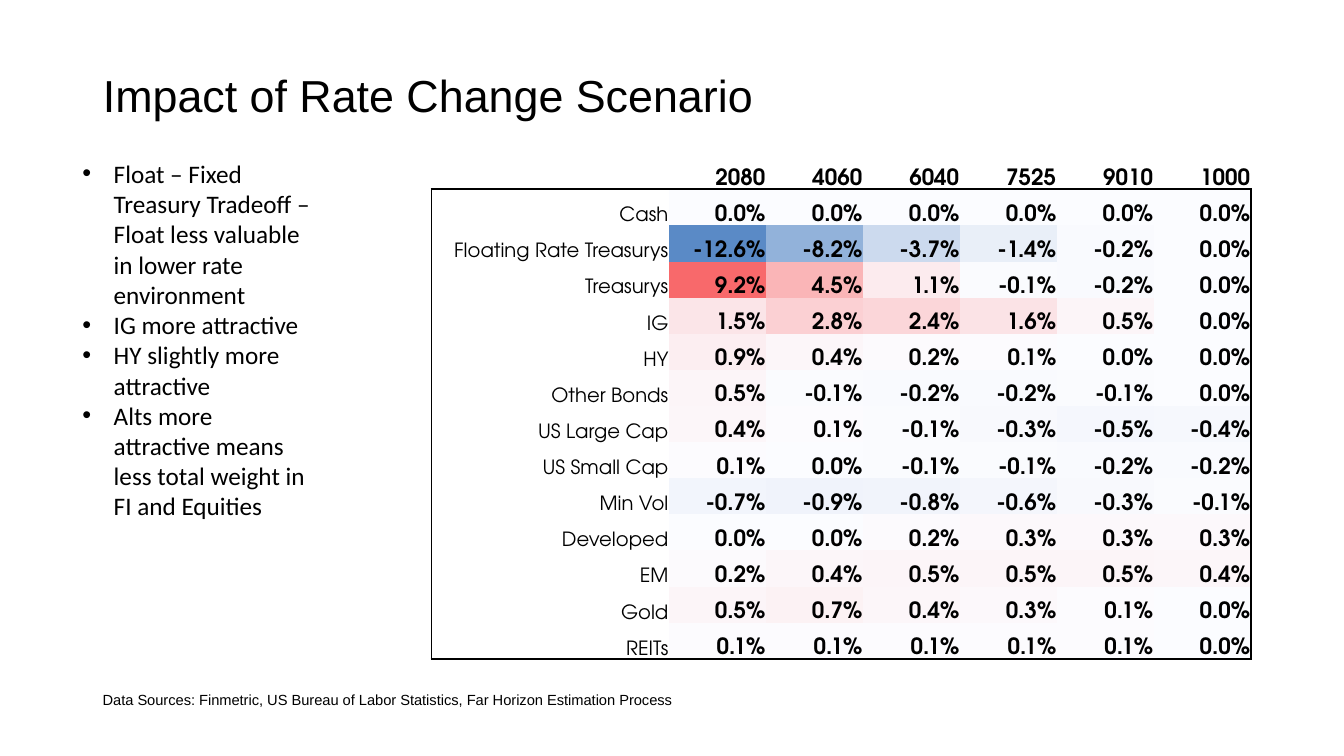
from pptx import Presentation
from pptx.dml.color import RGBColor
from pptx.enum.text import MSO_ANCHOR, MSO_AUTO_SIZE, PP_ALIGN
from pptx.oxml import parse_xml
from pptx.oxml.ns import nsdecls
from pptx.util import Emu, Pt

TITLE = "Impact of Rate Change Scenario"
POINTS = [
    "Float – Fixed Treasury Tradeoff – Float less valuable in lower rate environment",
    "IG more attractive",
    "HY slightly more attractive",
    "Alts more attractive means less total weight in FI and Equities",
]
SOURCES = "Data Sources: Finmetric, US Bureau of Labor Statistics, Far Horizon Estimation Process"
PORTFOLIOS = ["2080", "4060", "6040", "7525", "9010", "1000"]
CHANGES = {
    "Cash": [0.0, 0.0, 0.0, 0.0, 0.0, 0.0],
    "Floating Rate Treasurys": [-12.6, -8.2, -3.7, -1.4, -0.2, 0.0],
    "Treasurys": [9.2, 4.5, 1.1, -0.1, -0.2, 0.0],
    "IG": [1.5, 2.8, 2.4, 1.6, 0.5, 0.0],
    "HY": [0.9, 0.4, 0.2, 0.1, 0.0, 0.0],
    "Other Bonds": [0.5, -0.1, -0.2, -0.2, -0.1, 0.0],
    "US Large Cap": [0.4, 0.1, -0.1, -0.3, -0.5, -0.4],
    "US Small Cap": [0.1, 0.0, -0.1, -0.1, -0.2, -0.2],
    "Min Vol": [-0.7, -0.9, -0.8, -0.6, -0.3, -0.1],
    "Developed": [0.0, 0.0, 0.2, 0.3, 0.3, 0.3],
    "EM": [0.2, 0.4, 0.5, 0.5, 0.5, 0.4],
    "Gold": [0.5, 0.7, 0.4, 0.3, 0.1, 0.0],
    "REITs": [0.1, 0.1, 0.1, 0.1, 0.1, 0.0],
}
LOW, MID, HIGH = (-12.6, "5A8AC6"), (0.05, "FCFCFF"), (9.2, "F8696B")
TABLE_FONT = "TeX Gyre Adventor"


def px(n):
    return Emu(round(n * 9144))


def color(value):
    return RGBColor.from_string(value)


def put_text(p, text, size, font="Arial", bold=False, align=PP_ALIGN.LEFT, fill="000000"):
    p.alignment = align
    r = p.add_run()
    r.text = text
    r.font.size, r.font.name, r.font.bold = Pt(size), font, bold
    r.font.color.rgb = color(fill)


def heat(value):
    """Blend from the neutral colour towards the low or high end of the scale."""
    end, tint = LOW if value < MID[0] else HIGH
    share = (value - MID[0]) / (end - MID[0])
    pairs = zip(bytes.fromhex(MID[1]), bytes.fromhex(tint))
    return "".join(f"{round(a + (b - a) * share):02X}" for a, b in pairs)


def set_borders(cell, sides):
    """Draw the named sides (any of L, R, T, B) and clear the others."""
    tcPr = cell._tc.get_or_add_tcPr()
    for side in "LRTB":
        paint = '<a:solidFill><a:srgbClr val="000000"/></a:solidFill>' if side in sides else "<a:noFill/>"
        tcPr.append(parse_xml(f'<a:ln{side} {nsdecls("a")} w="{Pt(1.5)}">{paint}</a:ln{side}>'))


def add_title(s, x, y, w, h):
    sp = s.shapes.title
    sp.left, sp.top, sp.width, sp.height = map(px, (x, y, w, h))
    tf = sp.text_frame
    tf.auto_size = MSO_AUTO_SIZE.NONE
    tf.vertical_anchor = MSO_ANCHOR.MIDDLE
    tf.paragraphs[0].line_spacing = 0.9
    put_text(tf.paragraphs[0], TITLE, 32)


def add_text_box(s, x, y, w, h):
    tf = s.shapes.add_textbox(*map(px, (x, y, w, h))).text_frame
    tf.word_wrap = True
    tf.auto_size = MSO_AUTO_SIZE.SHAPE_TO_FIT_TEXT
    return tf


def add_points(s, x, y, w, h):
    tf = add_text_box(s, x, y, w, h)
    for i, point in enumerate(POINTS):
        p = tf.add_paragraph() if i else tf.paragraphs[0]
        pPr = p._p.get_or_add_pPr()
        pPr.set("marL", str(px(31)))
        pPr.set("indent", str(-px(31)))
        pPr.append(parse_xml(f'<a:buFont {nsdecls("a")} typeface="Arial"/>'))
        pPr.append(parse_xml(f'<a:buChar {nsdecls("a")} char="•"/>'))
        put_text(p, point, 18, font="Calibri")


def fill_cell(cell, text, size, bold, sides, fill=None):
    cell.margin_left = cell.margin_right = cell.margin_top = px(1)
    cell.margin_bottom = 0
    cell.vertical_anchor = MSO_ANCHOR.BOTTOM
    set_borders(cell, sides)
    if fill:
        cell.fill.solid()
        cell.fill.fore_color.rgb = color(fill)
    else:
        cell.fill.background()
    put_text(cell.text_frame.paragraphs[0], text, size, TABLE_FONT, bold, PP_ALIGN.RIGHT)


def add_change_table(s, x, y, w, h, label_w=236):
    """Heat map of weight changes, framed below its header row."""
    n_rows, n_cols = len(CHANGES) + 1, len(PORTFOLIOS) + 1
    table = s.shapes.add_table(n_rows, n_cols, *map(px, (x, y, w, h))).table
    table.first_row = table.horz_banding = False
    for row in table.rows:
        row.height = px(h / n_rows)
    for j, column in enumerate(table.columns):
        column.width = px((w - label_w) / len(PORTFOLIOS) if j else label_w)

    for j, name in enumerate(["", *PORTFOLIOS]):
        fill_cell(table.cell(0, j), name, 16, True, "B")
    for i, (asset, values) in enumerate(CHANGES.items(), 1):
        edges = ("T" if i == 1 else "") + ("B" if i == n_rows - 1 else "")
        fill_cell(table.cell(i, 0), asset, 14, False, edges + "L")
        for j, value in enumerate(values, 1):
            sides = edges + ("R" if j == n_cols - 1 else "")
            fill_cell(table.cell(i, j), f"{value:.1f}%", 16, True, sides, heat(value))


def add_sources(s, x, y, w, h):
    put_text(add_text_box(s, x, y, w, h).paragraphs[0], SOURCES, 10.5)


def main():
    prs = Presentation()
    prs.slide_width, prs.slide_height = px(1333), px(750)
    s = prs.slides.add_slide(prs.slide_layouts[5])
    add_title(s, 92, 42, 1150, 111)
    add_points(s, 72, 152, 247, 404)
    add_change_table(s, 428, 152, 813, 502)
    add_sources(s, 92, 680, 1204, 29)
    prs.save("out.pptx")


if __name__ == "__main__":
    main()
